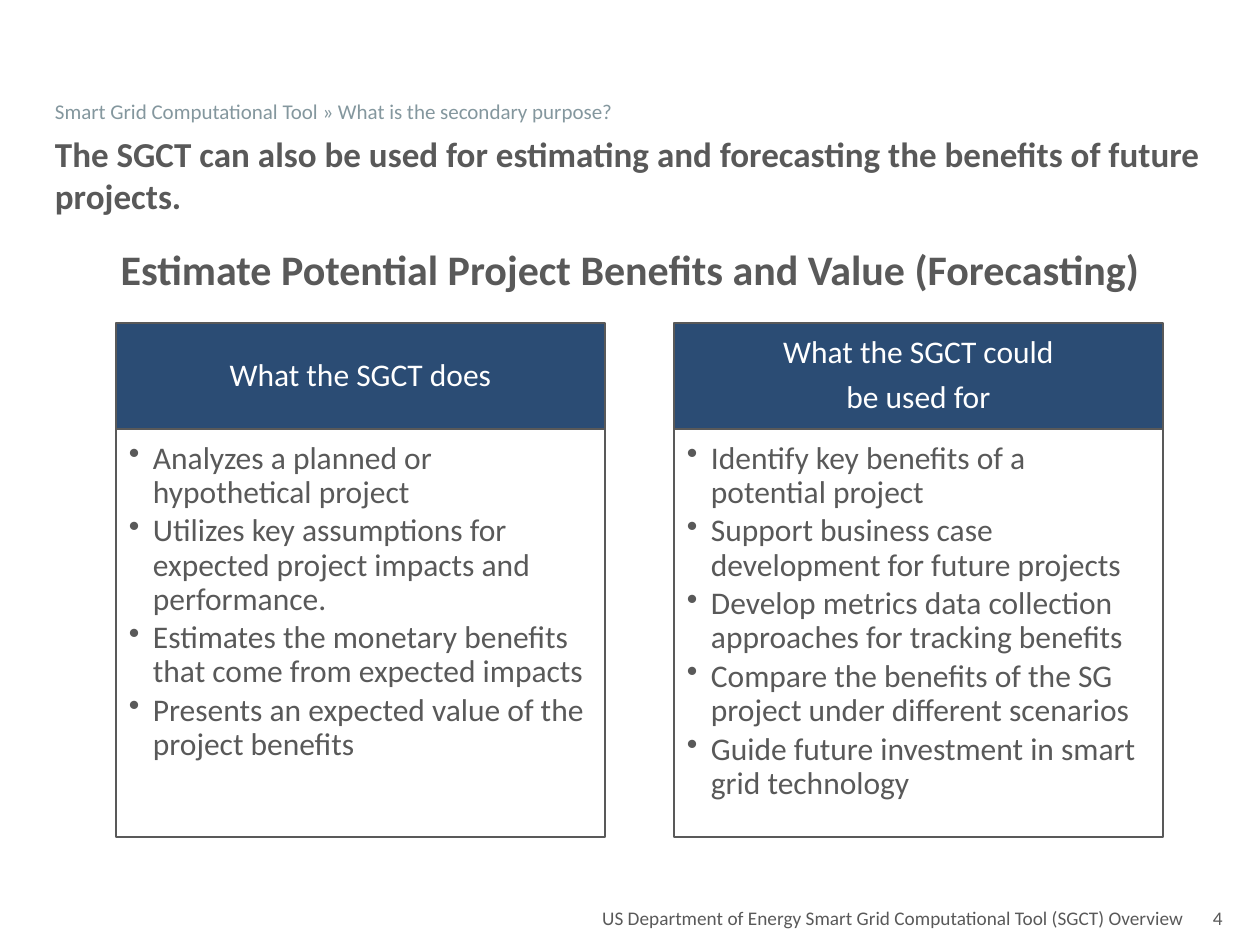
"""Build the slide on forecasting project benefits with the SGCT."""
from lxml import etree
from pptx import Presentation
from pptx.dml.color import RGBColor
from pptx.enum import shapes, text
from pptx.oxml import ns
from pptx.util import Emu, Pt

GREY = RGBColor(0x59, 0x59, 0x59)
SLATE = RGBColor(0x84, 0x97, 0x9E)
NAVY = RGBColor(0x2B, 0x4C, 0x74)
WHITE = RGBColor(0xFF, 0xFF, 0xFF)
LEFT, CENTER, RIGHT = text.PP_ALIGN.LEFT, text.PP_ALIGN.CENTER, text.PP_ALIGN.RIGHT
TOP, MIDDLE = text.MSO_ANCHOR.TOP, text.MSO_ANCHOR.MIDDLE

FONT = "Calibri"
PX = 914400 / 126
INDENT = 24
COLUMN_LEFT, COLUMN_STEP, COLUMN_WIDTH = 116, 558, 489
HEADER_TOP, HEADER_HEIGHT, BODY_HEIGHT = 323, 106, 408
PLAIN_INSETS = (13, 6, 13, 6)

LABELS = [
    ("US Department of Energy Smart Grid Computational Tool (SGCT) Overview",
     (388, 900, 809, 32), 11, GREY, False, RIGHT, TOP),
    ("4", (1200, 901, 73, 33), 11, GREY, False, LEFT, MIDDLE),
    ("Smart Grid Computational Tool » What is the secondary purpose?",
     (42, 95, 1172, 32), 12, SLATE, False, LEFT, MIDDLE),
    ("The SGCT can also be used for estimating and forecasting the benefits of future projects.",
     (42, 126, 1172, 84), 20, GREY, True, LEFT, TOP),
]
HEADING = "Estimate Potential Project Benefits and Value (Forecasting)"
COLUMNS = [
    (["What the SGCT does"],
     ["Analyzes a planned or hypothetical project",
      "Utilizes key assumptions for expected project impacts and performance.",
      "Estimates the monetary benefits that come from expected impacts",
      "Presents an expected value of the project benefits"]),
    (["What the SGCT could", "be used for"],
     ["Identify key benefits of a potential project",
      "Support business case development for future projects",
      "Develop metrics data collection approaches for tracking benefits",
      "Compare the benefits of the SG project under different scenarios",
      "Guide future investment in smart grid technology"]),
]


def px(length):
    return Emu(round(length * PX))


def add_bullet(para):
    properties = para._p.get_or_add_pPr()
    properties.set("marL", str(px(INDENT)))
    properties.set("indent", str(-px(INDENT)))
    etree.SubElement(properties, ns.qn("a:buChar")).set("char", "•")


def write(box, lines, size, color, bold=False, align=LEFT, anchor=TOP,
          insets=PLAIN_INSETS, spacing=None, after=0, bullets=False):
    frame = box.text_frame
    frame.word_wrap = True
    frame.vertical_anchor = anchor
    (frame.margin_left, frame.margin_top,
     frame.margin_right, frame.margin_bottom) = map(px, insets)
    for number, line in enumerate(lines):
        para = frame.add_paragraph() if number else frame.paragraphs[0]
        para.text = line
        if bullets:
            add_bullet(para)
        para.alignment = align
        para.line_spacing = spacing
        para.space_after = Pt(after)
        para.font.name = FONT
        para.font.size = Pt(size)
        para.font.bold = bold
        para.font.color.rgb = color


def add_panel(page, place, fill, outline=None):
    panel = page.shapes.add_shape(shapes.MSO_SHAPE.RECTANGLE, *map(px, place))
    panel.shadow.inherit = False
    panel.fill.solid()
    panel.fill.fore_color.rgb = fill
    if outline is None:
        panel.line.fill.background()
    else:
        panel.line.color.rgb = outline
        panel.line.width = Pt(1)
    return panel


def main():
    deck = Presentation()
    deck.slide_width, deck.slide_height = px(1260), px(945)
    page = deck.slides.add_slide(deck.slide_layouts[6])

    for line, place, *style in LABELS:
        write(page.shapes.add_textbox(*map(px, place)), [line], *style)

    for number, (header, points) in enumerate(COLUMNS):
        left = COLUMN_LEFT + number * COLUMN_STEP
        head = add_panel(page, (left, HEADER_TOP, COLUMN_WIDTH, HEADER_HEIGHT), NAVY, GREY)
        write(head, header, 18, WHITE, align=CENTER, anchor=MIDDLE,
              insets=(18, 10, 18, 10), spacing=0.9, after=6.3)
        body = add_panel(page, (left, HEADER_TOP + HEADER_HEIGHT, COLUMN_WIDTH, BODY_HEIGHT),
                         WHITE, GREY)
        write(body, points, 18, GREY, insets=(13, 13, 18, 20),
              spacing=0.9, after=2.7, bullets=True)

    heading = add_panel(page, (106, 231, 1048, 71), WHITE)
    write(heading, [HEADING], 24, GREY, True, CENTER, MIDDLE, (0, 0, 0, 0), 1.1)
    deck.save("out.pptx")


if __name__ == "__main__":
    main()
